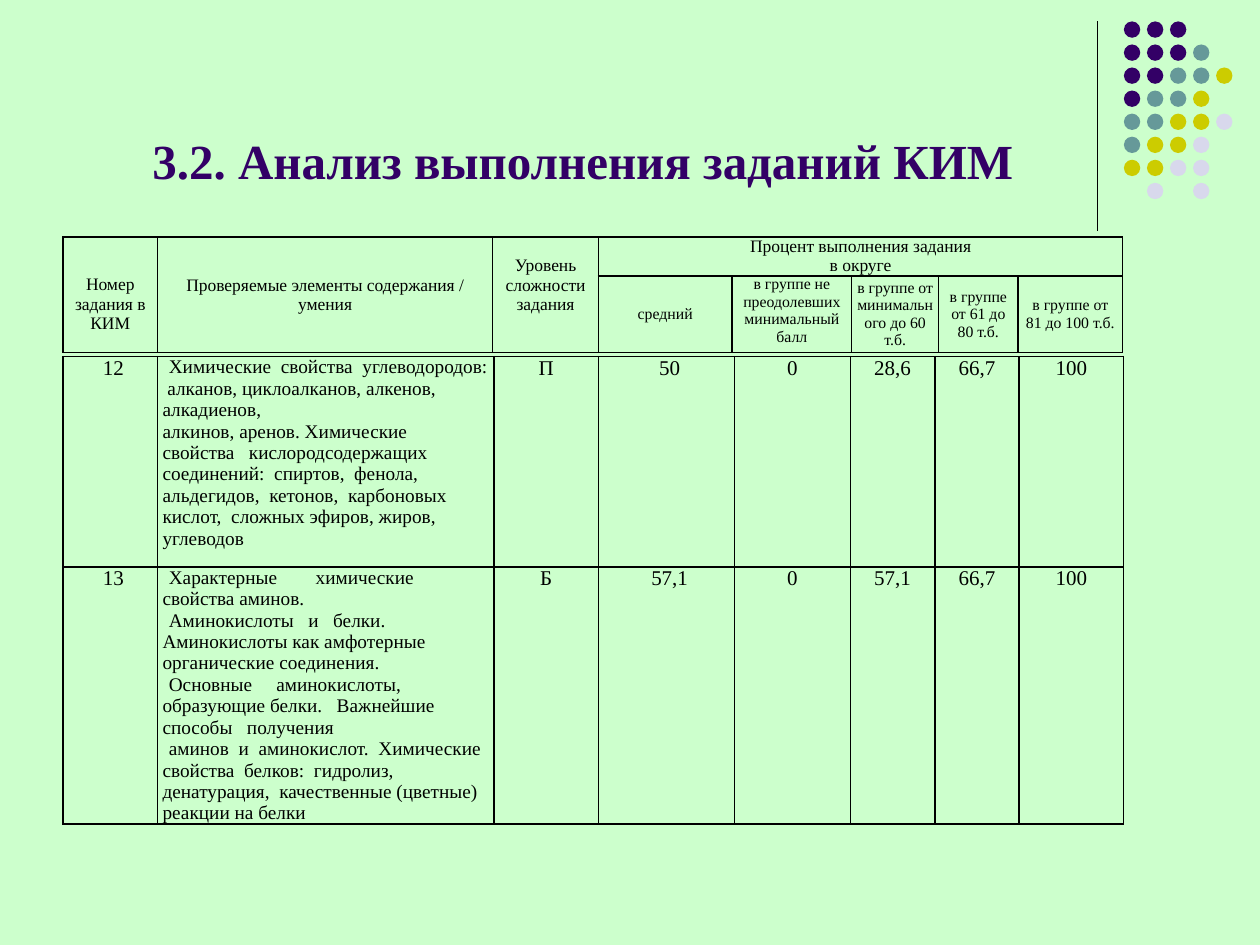
from dataclasses import dataclass

from lxml import etree
from pptx import Presentation
from pptx.dml.color import RGBColor
from pptx.enum import shapes, text
from pptx.oxml import ns
from pptx.util import Inches, Pt

MINT = RGBColor(0xCC, 0xFF, 0xCC)
BLACK = RGBColor(0, 0, 0)
PURPLE = RGBColor(0x33, 0x00, 0x66)
TEAL = RGBColor(0x66, 0x99, 0x99)
OLIVE = RGBColor(0xCC, 0xCC, 0x00)
LILAC = RGBColor(0xD8, 0xD8, 0xEC)
FONT = "Times New Roman"

WIDTH, HEIGHT = 10, 7.5
LEFT = 0.05 * WIDTH
DOT_COLOURS = {"p": PURPLE, "t": TEAL, "o": OLIVE, "l": LILAC}
DOT_ROWS = ("ppp", "pppt", "pptto", "ptto", "ttool", "tool", "ooll", " l l")
DOT_LEFT, DOT_TOP, DOT_PITCH, DOT_SIZE = 8.92, 0.17, 0.183, 0.13
HEADER_COLUMNS = (0.75, 2.66, 0.84, 1.06, 0.95, 0.69, 0.63, 0.83)
TASK_COLUMNS = (0.75, 2.67, 0.83, 1.08, 0.92, 0.67, 0.67, 0.83)
LINE = 0.15  # height of one header line
CENTER, START = text.PP_ALIGN.CENTER, text.PP_ALIGN.LEFT
TOP, MIDDLE = text.MSO_ANCHOR.TOP, text.MSO_ANCHOR.MIDDLE


@dataclass(frozen=True)
class Heading:
    row: int
    column: int
    lines: tuple[str, ...]
    last_row: int
    last_column: int
    size: float = 10
    anchor: text.MSO_ANCHOR = MIDDLE
    space_above: float = 0
    space_below: float = 0


@dataclass(frozen=True)
class Task:
    top: float
    height: float
    number: str
    skills: tuple[str, ...]
    indents: tuple[float, ...]
    level: str
    percents: tuple[str, ...]


GROUPS = (
    ("средний", MIDDLE),
    ("в группе не преодолевших минимальный балл", TOP),
    ("в группе от минимального до 60 т.б.", MIDDLE),
    ("в группе от 61 до 80 т.б.", MIDDLE),
    ("в группе от 81 до 100 т.б.", MIDDLE),
)
HEADINGS = [
    Heading(0, 0, ("Номер", "задания в КИМ"), 1, 0, space_above=LINE),
    Heading(0, 1, ("Проверяемые элементы содержания / умения",), 1, 1),
    Heading(0, 2, ("Уровень сложности задания",), 1, 2, space_below=LINE),
    Heading(0, 3, ("Процент выполнения задания\vв округе",), 0, 7, anchor=TOP),
] + [
    Heading(1, column, (label,), 1, column, size=9, anchor=anchor)
    for column, (label, anchor) in enumerate(GROUPS, start=3)
]

TASKS = (
    Task(2.83, 1.67, "12", (
        "Химические  свойства  углеводородов:  алканов, циклоалканов, алкенов, алкадиенов,",
        "алкинов, аренов. Химические   свойства   кислородсодержащих  соединений:  спиртов,  "
        "фенола,  альдегидов,  кетонов,  карбоновых  кислот,  сложных эфиров, жиров, углеводов",
    ), (0.05, 0), "П", ("50", "0", "28,6", "66,7", "100")),
    Task(4.5, 2.04, "13", (
        "Характерные        химические        свойства аминов.",
        "Аминокислоты   и   белки.   Аминокислоты как амфотерные органические соединения.",
        "Основные     аминокислоты,     образующие белки.   Важнейшие   способы   получения",
        "аминов  и  аминокислот.  Химические  свойства  белков:  гидролиз,  денатурация,  "
        "качественные (цветные) реакции на белки",
    ), (0.05,) * 4, "Б", ("57,1", "0", "57,1", "66,7", "100")),
)


def write(frame, lines, *, size, color=BLACK, bold=False, align=CENTER, indents=()):
    for index, line in enumerate(lines):
        paragraph = frame.paragraphs[0] if index == 0 else frame.add_paragraph()
        paragraph.text = line
        paragraph.alignment = align
        font = paragraph.font
        font.name, font.size, font.bold = FONT, Pt(size), bold
        font.color.rgb = color
        for run in paragraph.runs:
            run.font.name, run.font.size, run.font.bold = FONT, Pt(size), bold
            run.font.color.rgb = color
        if indents:
            properties = paragraph._p.get_or_add_pPr()
            properties.set("marL", "0")
            properties.set("indent", str(Inches(indents[index])))


def add_borders(cell) -> None:
    properties = cell._tc.get_or_add_tcPr()
    for position, side in enumerate(("lnL", "lnR", "lnT", "lnB")):
        line = etree.Element(ns.qn(f"a:{side}"), w=str(Pt(1)))
        fill = etree.SubElement(line, ns.qn("a:solidFill"))
        etree.SubElement(fill, ns.qn("a:srgbClr"), val=str(BLACK))
        properties.insert(position, line)


def add_grid(slide, top: float, columns: tuple, rows: tuple):
    """Add an unfilled table with black rules."""
    table = slide.shapes.add_table(
        len(rows), len(columns), Inches(LEFT), Inches(top),
        Inches(sum(columns)), Inches(sum(rows))).table
    table.first_row = table.horz_banding = False
    for column, width in zip(table.columns, columns):
        column.width = Inches(width)
    for row, height in zip(table.rows, rows):
        row.height = Inches(height)
    for cell in table.iter_cells():
        cell.margin_left = cell.margin_right = Inches(0.04)
        cell.margin_top = cell.margin_bottom = 0
        cell.fill.background()
        add_borders(cell)
    return table


def add_header(slide) -> None:
    table = add_grid(slide, 1.88, HEADER_COLUMNS, (0.31, 0.61))
    for heading in HEADINGS:
        cell = table.cell(heading.row, heading.column)
        last = table.cell(heading.last_row, heading.last_column)
        if (heading.row, heading.column) != (heading.last_row, heading.last_column):
            cell.merge(last)
        cell.vertical_anchor = heading.anchor
        cell.margin_top = Inches(heading.space_above)
        cell.margin_bottom = Inches(heading.space_below)
        write(cell.text_frame, heading.lines, size=heading.size)


def add_task(slide, task: Task) -> None:
    cells = add_grid(slide, task.top, TASK_COLUMNS, (task.height,)).rows[0].cells
    number, skills, level, *percents = cells
    write(number.text_frame, (task.number,), size=12, indents=(0.05,))
    write(skills.text_frame, task.skills, size=11, align=START, indents=task.indents)
    write(level.text_frame, (task.level,), size=12, indents=(-0.08,))
    for index, (cell, percent) in enumerate(zip(percents, task.percents)):
        write(cell.text_frame, (percent,), size=12, indents=(0 if index else 0.05,))


def add_ornament(slide) -> None:
    """Draw the corner rule and its grid of dots."""
    rule = slide.shapes.add_connector(
        shapes.MSO_CONNECTOR.STRAIGHT,
        Inches(8.71), Inches(0.17), Inches(8.71), Inches(1.83))
    rule.line.color.rgb = BLACK
    rule.line.width = Pt(0.75)
    etree.SubElement(rule._element.spPr, ns.qn("a:effectLst"))
    dots = slide.shapes.add_group_shape().shapes
    for row, marks in enumerate(DOT_ROWS):
        for column, mark in enumerate(marks):
            if mark == " ":
                continue
            dot = dots.add_shape(
                shapes.MSO_SHAPE.OVAL,
                Inches(DOT_LEFT + column * DOT_PITCH), Inches(DOT_TOP + row * DOT_PITCH),
                Inches(DOT_SIZE), Inches(DOT_SIZE))
            dot.shadow.inherit = False
            dot.fill.solid()
            dot.fill.fore_color.rgb = DOT_COLOURS[mark]
            dot.line.fill.background()


def main() -> None:
    deck = Presentation()
    deck.slide_width, deck.slide_height = Inches(WIDTH), Inches(HEIGHT)
    slide = deck.slides.add_slide(deck.slide_layouts[5])
    slide.background.fill.solid()
    slide.background.fill.fore_color.rgb = MINT
    add_ornament(slide)
    title = slide.shapes.title
    title.left, title.top = Inches(LEFT), Inches(0.13)
    title.width, title.height = Inches(8.25), Inches(1.42)
    title.text_frame.vertical_anchor = text.MSO_ANCHOR.BOTTOM
    write(title.text_frame, ("3.2. Анализ выполнения заданий КИМ",),
          size=28, color=PURPLE, bold=True)
    add_header(slide)
    for task in TASKS:
        add_task(slide, task)
    deck.save("out.pptx")


if __name__ == "__main__":
    main()
